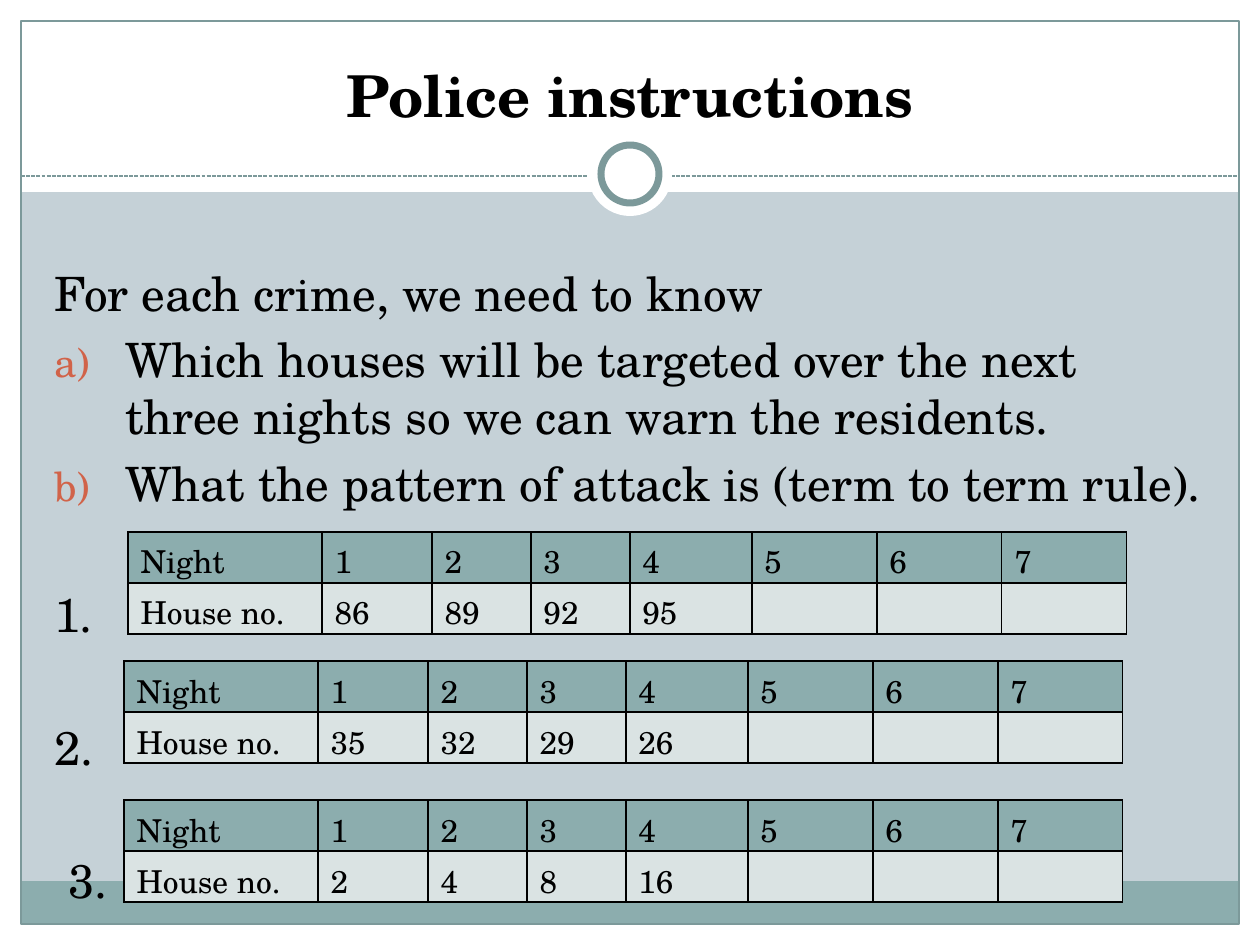
from lxml import etree
from pptx import Presentation
from pptx.dml.color import RGBColor
from pptx.enum.dml import MSO_LINE
from pptx.enum.shapes import MSO_CONNECTOR, MSO_SHAPE
from pptx.enum.text import MSO_ANCHOR, PP_ALIGN
from pptx.oxml.ns import qn
from pptx.util import Emu, Pt

RECT, OVAL = MSO_SHAPE.RECTANGLE, MSO_SHAPE.OVAL
STRAIGHT, DASH = MSO_CONNECTOR.STRAIGHT, MSO_LINE.SQUARE_DOT
CENTER, BOTTOM = PP_ALIGN.CENTER, MSO_ANCHOR.BOTTOM

FONT = "TeX Gyre Schola"
BLACK, WHITE, TEAL, PALE = "000000", "FFFFFF", "8CADAE", "DAE3E3"
EDGE, BACKDROP, BULLET = "7C999A", "C5D1D7", "D16349"

WIDTH, HEIGHT = 1260, 945
MARGIN = 21
COLUMNS = [194, 110, 99, 99, 122, 125, 125, 125]
ROW_HEIGHT = 51
HANGING = 71
NIGHTS = ["Night", *map(str, range(1, 8))]

# table left, table top, number left, house numbers
CRIMES = [
    (128, 532, 42, [86, 89, 92, 95]),
    (124, 661, 42, [35, 32, 29, 26]),
    (124, 800, 56, [2, 4, 8, 16]),
]
NUMBER_TOP, NUMBER_STEP = 585, 133


def px(n):
    return Emu(round(n * 914400 / 126))


def rgb(value):
    return RGBColor.from_string(value)


def paint(fill, color):
    fill.solid()
    fill.fore_color.rgb = rgb(color)


def add_box(slide, kind, x, y, w, h, fill=None, line=None, weight=0.75):
    sp = slide.shapes.add_shape(kind, px(x), px(y), px(w), px(h))
    sp.shadow.inherit = False
    if fill:
        paint(sp.fill, fill)
    else:
        sp.fill.background()
    if line:
        sp.line.color.rgb = rgb(line)
        sp.line.width = Pt(weight)
    else:
        sp.line.fill.background()


def add_dashed_line(slide, x1, x2, y):
    line = slide.shapes.add_connector(STRAIGHT, px(x1), px(y), px(x2), px(y))
    line.line.color.rgb = rgb(EDGE)
    line.line.width = Pt(0.75)
    line.line.dash_style = DASH
    etree.SubElement(line._element.spPr, qn("a:effectLst"))


def write(p, text, size=27, bold=False, align=None, leading=None, before=None):
    r = p.add_run()
    r.text = text
    r.font.name = FONT
    r.font.size = Pt(size)
    r.font.bold = bold
    r.font.color.rgb = rgb(BLACK)
    if align is not None:
        p.alignment = align
    if leading:
        p.line_spacing = Pt(leading)
    if before:
        p.space_before = Pt(before)


def letter(p):
    """Number a paragraph a), b), ... with a hanging indent."""
    pPr = p._p.get_or_add_pPr()
    pPr.set("marL", str(px(HANGING)))
    pPr.set("indent", str(-px(HANGING)))
    color = etree.SubElement(pPr, qn("a:buClr"))
    etree.SubElement(color, qn("a:srgbClr"), val=BULLET)
    etree.SubElement(pPr, qn("a:buSzPct"), val="85000")
    etree.SubElement(pPr, qn("a:buFont"), typeface=FONT)
    etree.SubElement(pPr, qn("a:buAutoNum"), type="alphaLcParenR")


def add_text(slide, x, y, w, h):
    tf = slide.shapes.add_textbox(px(x), px(y), px(w), px(h)).text_frame
    tf.word_wrap = True
    tf.margin_top = tf.margin_bottom = 0
    return tf


def add_title(slide, text):
    sp = slide.shapes.title
    sp.left, sp.top, sp.width, sp.height = px(42), px(24), px(1176), px(105)
    tf = sp.text_frame
    tf.vertical_anchor = BOTTOM
    tf.margin_top = tf.margin_bottom = 0
    write(tf.paragraphs[0], text, size=33, bold=True, align=CENTER)
    slide.shapes._spTree.append(sp._element)  # in front of the white band


def add_instructions(slide, intro, items):
    tf = add_text(slide, 42, 264, 1172, 240)
    write(tf.paragraphs[0], intro, leading=32.5)
    for item in items:
        p = tf.add_paragraph()
        write(p, item, leading=32.5, before=5.4)
        letter(p)


def add_borders(cell):
    tcPr = cell._tc.get_or_add_tcPr()
    for i, side in enumerate(("lnL", "lnR", "lnT", "lnB")):
        ln = etree.Element(qn("a:" + side), w=str(Pt(1)))
        fill = etree.SubElement(ln, qn("a:solidFill"))
        etree.SubElement(fill, qn("a:srgbClr"), val=BLACK)
        tcPr.insert(i, ln)


def add_nights_table(slide, x, y, houses):
    rows = [NIGHTS, ["House no.", *map(str, houses)]]
    table = slide.shapes.add_table(
        len(rows), len(COLUMNS), px(x), px(y),
        px(sum(COLUMNS)), px(ROW_HEIGHT * len(rows))).table
    table.horz_banding = table.first_row = False
    for column, width in zip(table.columns, COLUMNS):
        column.width = px(width)
    for i, (texts, fill) in enumerate(zip(rows, (TEAL, PALE))):
        table.rows[i].height = px(ROW_HEIGHT)
        for j in range(len(COLUMNS)):
            cell = table.cell(i, j)
            paint(cell.fill, fill)
            add_borders(cell)
            if j < len(texts):
                write(cell.text_frame.paragraphs[0], texts[j], size=18)


def add_backdrop(slide):
    paint(slide.background.fill, BACKDROP)
    right, bottom = WIDTH - MARGIN, HEIGHT - MARGIN
    inner = WIDTH - 2 * MARGIN
    add_box(slide, RECT, 0, bottom, WIDTH, MARGIN, WHITE)
    add_box(slide, RECT, 0, 0, WIDTH, 192, WHITE)
    for x in (0, right):
        add_box(slide, RECT, x, 0, MARGIN, HEIGHT, WHITE)
    add_box(slide, RECT, MARGIN, 881, inner, 43, TEAL)
    add_box(slide, RECT, MARGIN, MARGIN, inner, HEIGHT - 2 * MARGIN, line=EDGE)
    add_dashed_line(slide, MARGIN, right, 176)
    add_box(slide, OVAL, 588, 132, 84, 84, WHITE)
    add_box(slide, OVAL, 601, 145, 58, 58, WHITE, EDGE, 4)


def main():
    prs = Presentation()
    prs.slide_width, prs.slide_height = px(WIDTH), px(HEIGHT)
    slide = prs.slides.add_slide(prs.slide_layouts[5])
    add_backdrop(slide)
    add_title(slide, "Police instructions")
    add_instructions(slide, "For each crime, we need to know", [
        "Which houses will be targeted over the next three nights "
        "so we can warn the residents.",
        "What the pattern of attack is (term to term rule).",
    ])
    for i, (x, y, number_x, houses) in enumerate(CRIMES):
        tf = add_text(slide, number_x, NUMBER_TOP + i * NUMBER_STEP, 76, 57)
        write(tf.paragraphs[0], f"{i + 1}.", leading=32.5)
        add_nights_table(slide, x, y, houses)
    prs.save("out.pptx")


if __name__ == "__main__":
    main()
